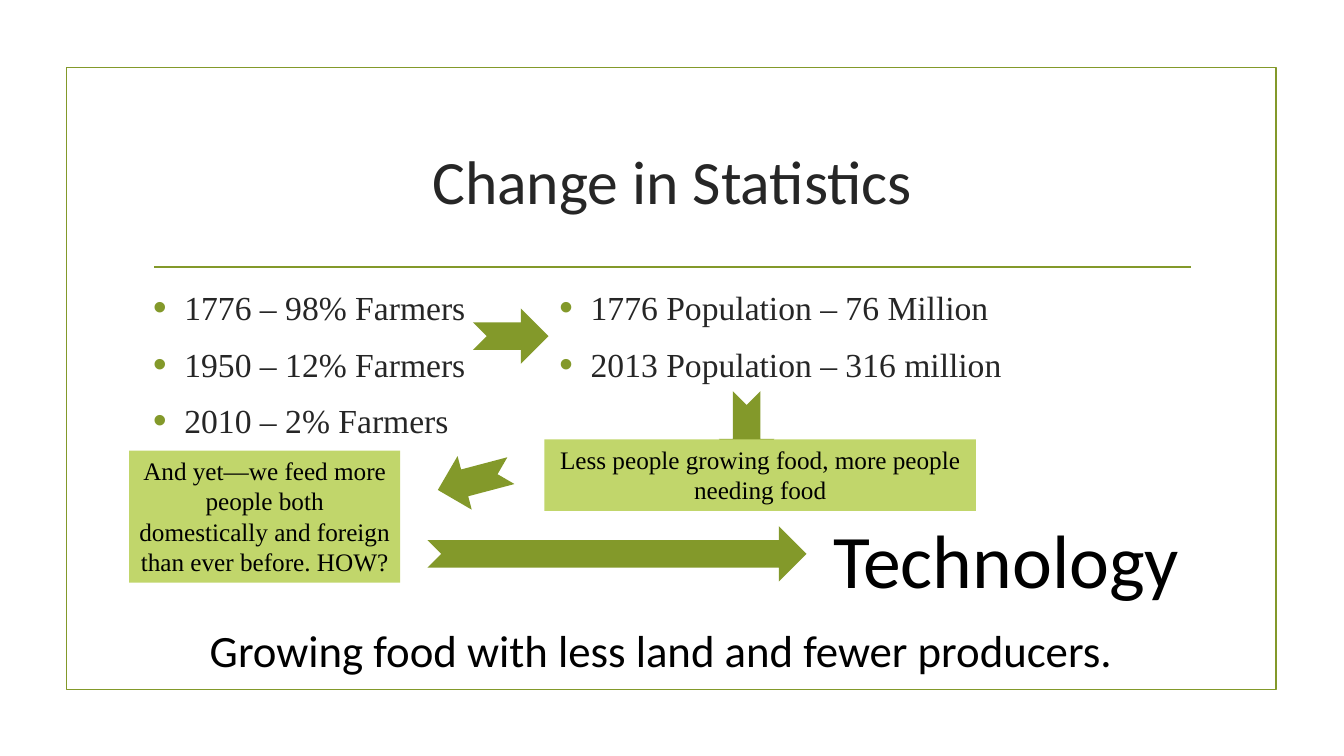
"""Build the Change in Statistics slide on farming and population."""
from dataclasses import dataclass

from lxml.etree import SubElement
from pptx import Presentation
from pptx.dml.color import RGBColor
from pptx.enum.shapes import MSO_CONNECTOR, MSO_SHAPE
from pptx.enum.text import MSO_ANCHOR, PP_ALIGN
from pptx.oxml.ns import qn
from pptx.shapes.autoshape import Shape
from pptx.slide import Slide
from pptx.text.text import TextFrame
from pptx.util import Inches, Pt

OLIVE = RGBColor(0x83, 0x99, 0x2A)
LIME = RGBColor(0xC1, 0xD6, 0x6B)
CHARCOAL = RGBColor(0x26, 0x26, 0x26)
BLACK = RGBColor(0, 0, 0)
SANS = "Calibri"
SERIF = "Times New Roman"


@dataclass(frozen=True)
class Box:
    left: float
    top: float
    width: float
    height: float

    def lengths(self) -> tuple[Inches, Inches, Inches, Inches]:
        return (Inches(self.left), Inches(self.top),
                Inches(self.width), Inches(self.height))


@dataclass(frozen=True)
class Arrow:
    box: Box
    rotation: float = 0


@dataclass(frozen=True)
class Caption:
    box: Box
    text: str
    size: int
    font: str = SANS
    color: RGBColor = BLACK
    fill: RGBColor | None = None


@dataclass(frozen=True)
class FactList:
    box: Box
    facts: tuple[str, ...]


FRAME = Box(0.66, 0.67, 12, 6.17)
ARROWS_BELOW = (
    Arrow(Box(4.69, 3.06, 0.75, 0.55)),
    Arrow(Box(7.03, 3.98, 0.75, 0.55), 90),
)
ARROWS_ABOVE = (
    Arrow(Box(4.33, 4.49, 0.75, 0.55), 165.2),
    Arrow(Box(4.24, 5.22, 3.76, 0.55)),
)
FACT_LISTS = (
    FactList(Box(1.42, 2.8, 6.12, 3.63),
             ("1776 – 98% Farmers", "1950 – 12% Farmers", "2010 – 2% Farmers")),
    FactList(Box(5.45, 2.8, 6.12, 3.63),
             ("1776 Population – 76 Million", "2013 Population – 316 million")),
)
TITLE = Caption(Box(1.42, 1.07, 10.5, 1.43), "Change in Statistics", 44,
                color=CHARCOAL)
CAPTIONS = (
    Caption(Box(5.4, 4.36, 4.28, 0.71),
            "Less people growing food, more people needing food",
            18, SERIF, fill=LIME),
    Caption(Box(1.28, 4.47, 2.69, 1.31),
            "And yet—we feed more people both domestically and foreign "
            "than ever before. HOW?", 18, SERIF, fill=LIME),
    Caption(Box(7.88, 5.04, 4.2, 1.01), "Technology", 54),
    Caption(Box(1.69, 6.13, 9.74, 0.64),
            "Growing food with less land and fewer producers.", 32),
)


def add_text_frame(slide: Slide, box: Box) -> TextFrame:
    frame = slide.shapes.add_textbox(*box.lengths()).text_frame
    frame.word_wrap = True
    return frame


def add_plain_shape(slide: Slide, kind: MSO_SHAPE, box: Box,
                    fill: RGBColor | None) -> Shape:
    shape = slide.shapes.add_shape(kind, *box.lengths())
    shape.shadow.inherit = False
    if fill is None:
        shape.fill.background()
    else:
        shape.fill.solid()
        shape.fill.fore_color.rgb = fill
    shape.line.fill.background()
    return shape


def add_border(slide: Slide) -> None:
    border = add_plain_shape(slide, MSO_SHAPE.RECTANGLE, FRAME, None)
    border.line.color.rgb = OLIVE
    border.line.width = Pt(1.25)


def add_title_rule(slide: Slide) -> None:
    rule = slide.shapes.add_connector(
        MSO_CONNECTOR.STRAIGHT,
        Inches(1.53), Inches(2.65), Inches(11.81), Inches(2.65))
    rule.line.color.rgb = OLIVE
    rule.line.width = Pt(1.25)
    SubElement(rule._element.spPr, qn("a:effectLst"))


def add_arrow(slide: Slide, arrow: Arrow) -> None:
    shape = add_plain_shape(slide, MSO_SHAPE.NOTCHED_RIGHT_ARROW, arrow.box, OLIVE)
    shape.rotation = arrow.rotation


def add_caption(slide: Slide, caption: Caption,
                anchor: MSO_ANCHOR = MSO_ANCHOR.TOP) -> None:
    if caption.fill is None:
        frame = add_text_frame(slide, caption.box)
    else:
        frame = add_plain_shape(slide, MSO_SHAPE.RECTANGLE, caption.box,
                                caption.fill).text_frame
        frame.word_wrap = True
    frame.vertical_anchor = anchor
    paragraph = frame.paragraphs[0]
    paragraph.alignment = PP_ALIGN.CENTER
    run = paragraph.add_run()
    run.text = caption.text
    run.font.name = caption.font
    run.font.size = Pt(caption.size)
    run.font.color.rgb = caption.color


def add_fact_list(slide: Slide, fact_list: FactList) -> None:
    frame = add_text_frame(slide, fact_list.box)
    for index, fact in enumerate(fact_list.facts):
        paragraph = frame.add_paragraph() if index else frame.paragraphs[0]
        if index:
            paragraph.space_before = Pt(5.5)
        paragraph.space_after = Pt(6)
        properties = paragraph._p.get_or_add_pPr()
        properties.set("marL", str(Inches(0.31)))
        properties.set("indent", str(Inches(-0.31)))
        bullet_color = SubElement(properties, qn("a:buClr"))
        SubElement(bullet_color, qn("a:srgbClr"), val=str(OLIVE))
        SubElement(properties, qn("a:buSzPct"), val="115000")
        SubElement(properties, qn("a:buFont"), typeface="Arial")
        SubElement(properties, qn("a:buChar"), char="•")
        run = paragraph.add_run()
        run.text = fact
        run.font.name = SERIF
        run.font.size = Pt(24)
        run.font.color.rgb = CHARCOAL


def main() -> None:
    presentation = Presentation()
    presentation.slide_width = Inches(13.33)
    presentation.slide_height = Inches(7.5)
    slide = presentation.slides.add_slide(presentation.slide_layouts[6])
    add_border(slide)
    add_title_rule(slide)
    add_caption(slide, TITLE, MSO_ANCHOR.MIDDLE)
    for fact_list in FACT_LISTS:
        add_fact_list(slide, fact_list)
    for arrow in ARROWS_BELOW:
        add_arrow(slide, arrow)
    less_people, *later_captions = CAPTIONS
    add_caption(slide, less_people)
    for arrow in ARROWS_ABOVE:
        add_arrow(slide, arrow)
    for caption in later_captions:
        add_caption(slide, caption)
    presentation.save("out.pptx")


if __name__ == "__main__":
    main()
